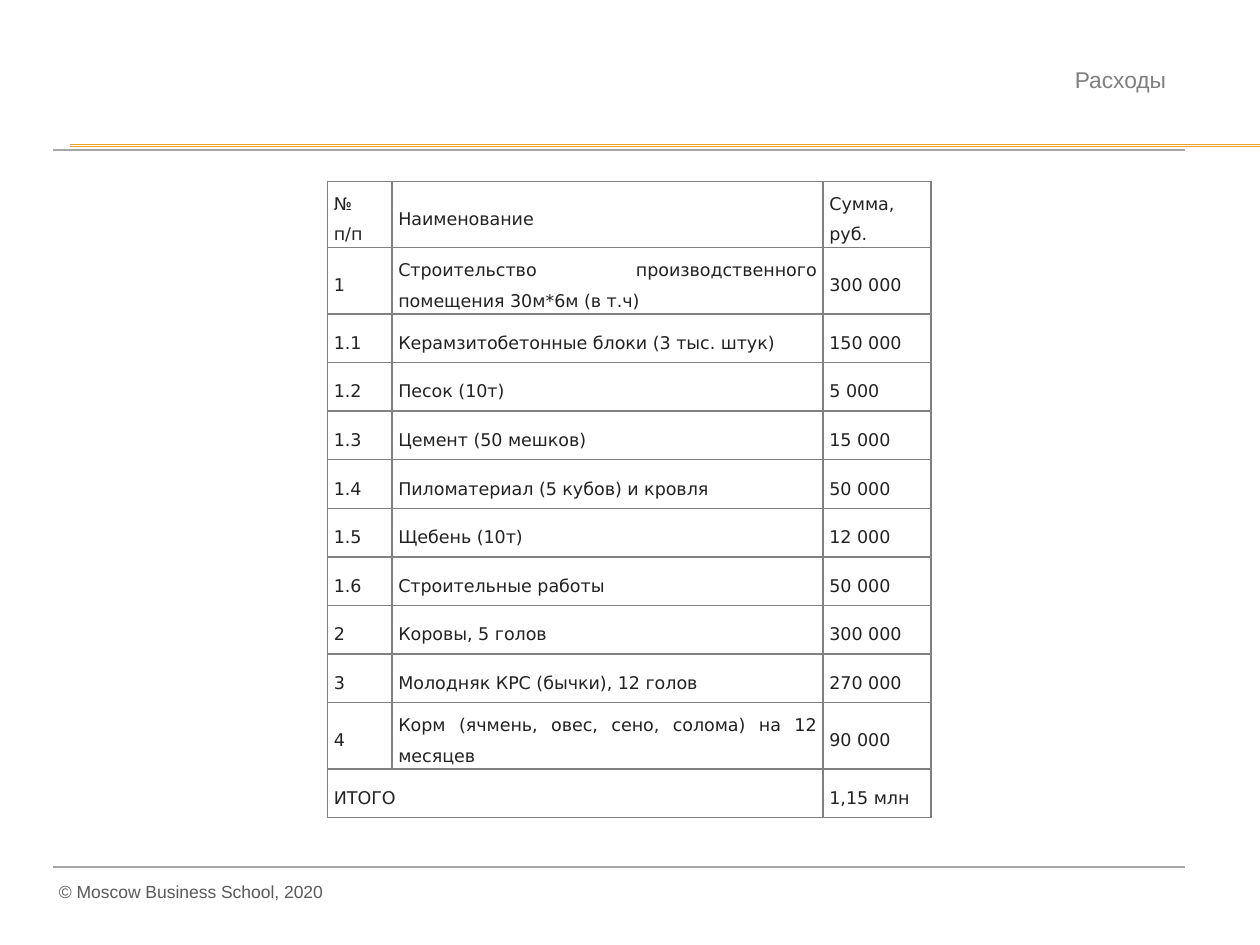
from lxml import etree
from pptx import Presentation
from pptx.dml.color import RGBColor
from pptx.enum.shapes import MSO_CONNECTOR
from pptx.enum.text import MSO_ANCHOR, PP_ALIGN
from pptx.oxml.ns import qn
from pptx.util import Cm, Pt

STRAIGHT = MSO_CONNECTOR.STRAIGHT
MIDDLE = MSO_ANCHOR.MIDDLE
LEFT, RIGHT, JUSTIFY = PP_ALIGN.LEFT, PP_ALIGN.RIGHT, PP_ALIGN.JUSTIFY

COLORS = {
    "accent": "F0A22E",
    "rule": "A6A6A6",
    "title": "7F7F7F",
    "footer": "595959",
    "border": "7F8080",
    "cell": "FFFFFF",
    "cell_text": "222222",
}
EXPENSES = [
    ("№ п/п", "Наименование", "Сумма, руб."),
    ("1", "Строительство производственного помещения 30м*6м (в т.ч)", "300 000"),
    ("1.1", "Керамзитобетонные блоки (3 тыс. штук)", "150 000"),
    ("1.2", "Песок (10т)", "5 000"),
    ("1.3", "Цемент (50 мешков)", "15 000"),
    ("1.4", "Пиломатериал (5 кубов) и кровля", "50 000"),
    ("1.5", "Щебень (10т)", "12 000"),
    ("1.6", "Строительные работы", "50 000"),
    ("2", "Коровы, 5 голов", "300 000"),
    ("3", "Молодняк КРС (бычки), 12 голов", "270 000"),
    ("4", "Корм (ячмень, овес, сено, солома) на 12 месяцев", "90 000"),
    ("ИТОГО", "", "1,15 млн"),
]
COLUMN_WIDTHS = (1.3, 8.69, 2.18)
ROW_HEIGHT, TWO_LINE_HEIGHT = 0.98, 1.33
TWO_LINE_ROWS = (0, 1, 10)


def color(name):
    return RGBColor.from_string(COLORS[name])


def style_paragraph(para, font_name, size, color_name, align, spacing):
    para.alignment = align
    para.line_spacing = spacing
    para.font.name = font_name
    para.font.size = Pt(size)
    para.font.color.rgb = color(color_name)


def add_rule(page, left, right, top, color_name, width):
    rule = page.shapes.add_connector(STRAIGHT, Cm(left), Cm(top), Cm(right), Cm(top))
    rule.line.color.rgb = color(color_name)
    rule.line.width = Pt(width)
    etree.SubElement(rule._element.spPr, qn("a:effectLst"))


def add_text(page, text, left, top, width, height, size, color_name,
             align=LEFT, spacing=1.0, wrap=True):
    box = page.shapes.add_textbox(Cm(left), Cm(top), Cm(width), Cm(height))
    box.text_frame.word_wrap = wrap
    para = box.text_frame.paragraphs[0]
    para.text = text
    style_paragraph(para, "Arial", size, color_name, align, spacing)


def add_borders(cell):
    properties = cell._tc.get_or_add_tcPr()
    for side in ("lnL", "lnR", "lnT", "lnB"):
        line = etree.SubElement(properties, qn(f"a:{side}"), w=str(Pt(1)))
        fill = etree.SubElement(line, qn("a:solidFill"))
        etree.SubElement(fill, qn("a:srgbClr"), val=COLORS["border"])


def style_cell(cell):
    cell.margin_left = cell.margin_right = Cm(0.13)
    cell.margin_top = cell.margin_bottom = Cm(0.03)
    cell.vertical_anchor = MIDDLE
    add_borders(cell)
    cell.fill.solid()
    cell.fill.fore_color.rgb = color("cell")
    style_paragraph(cell.text_frame.paragraphs[0], "DejaVu Sans", 10,
                    "cell_text", JUSTIFY, 1.5)


def add_expense_table(page, left, top):
    heights = [TWO_LINE_HEIGHT if index in TWO_LINE_ROWS else ROW_HEIGHT
               for index in range(len(EXPENSES))]
    table = page.shapes.add_table(
        len(EXPENSES), len(COLUMN_WIDTHS), Cm(left), Cm(top),
        Cm(sum(COLUMN_WIDTHS)), Cm(sum(heights))).table
    table.first_row = table.horz_banding = False
    for column, width in zip(table.columns, COLUMN_WIDTHS):
        column.width = Cm(width)
    for row, height, values in zip(table.rows, heights, EXPENSES):
        row.height = Cm(height)
        for cell, value in zip(row.cells, values):
            cell.text = value
            style_cell(cell)
    total = len(EXPENSES) - 1
    table.cell(total, 0).merge(table.cell(total, 1))


def main():
    deck = Presentation()
    deck.slide_width, deck.slide_height = Cm(25.4), Cm(19.05)
    page = deck.slides.add_slide(deck.slide_layouts[6])
    for top in (2.92, 2.95):
        add_rule(page, 1.42, 25.4, top, "accent", 0.75)
    for top in (17.48, 3.02):
        add_rule(page, 1.07, 23.88, top, "rule", 1)
    add_text(page, "Расходы ", 13.36, 1.09, 10.52, 0.86, 13, "title",
             align=RIGHT, spacing=1.2)
    add_text(page, "© Moscow Business School, 2020", 0.94, 17.63, 5.87, 0.69,
             10, "footer", wrap=False)
    add_expense_table(page, 6.6, 3.66)
    deck.save("out.pptx")


if __name__ == "__main__":
    main()
